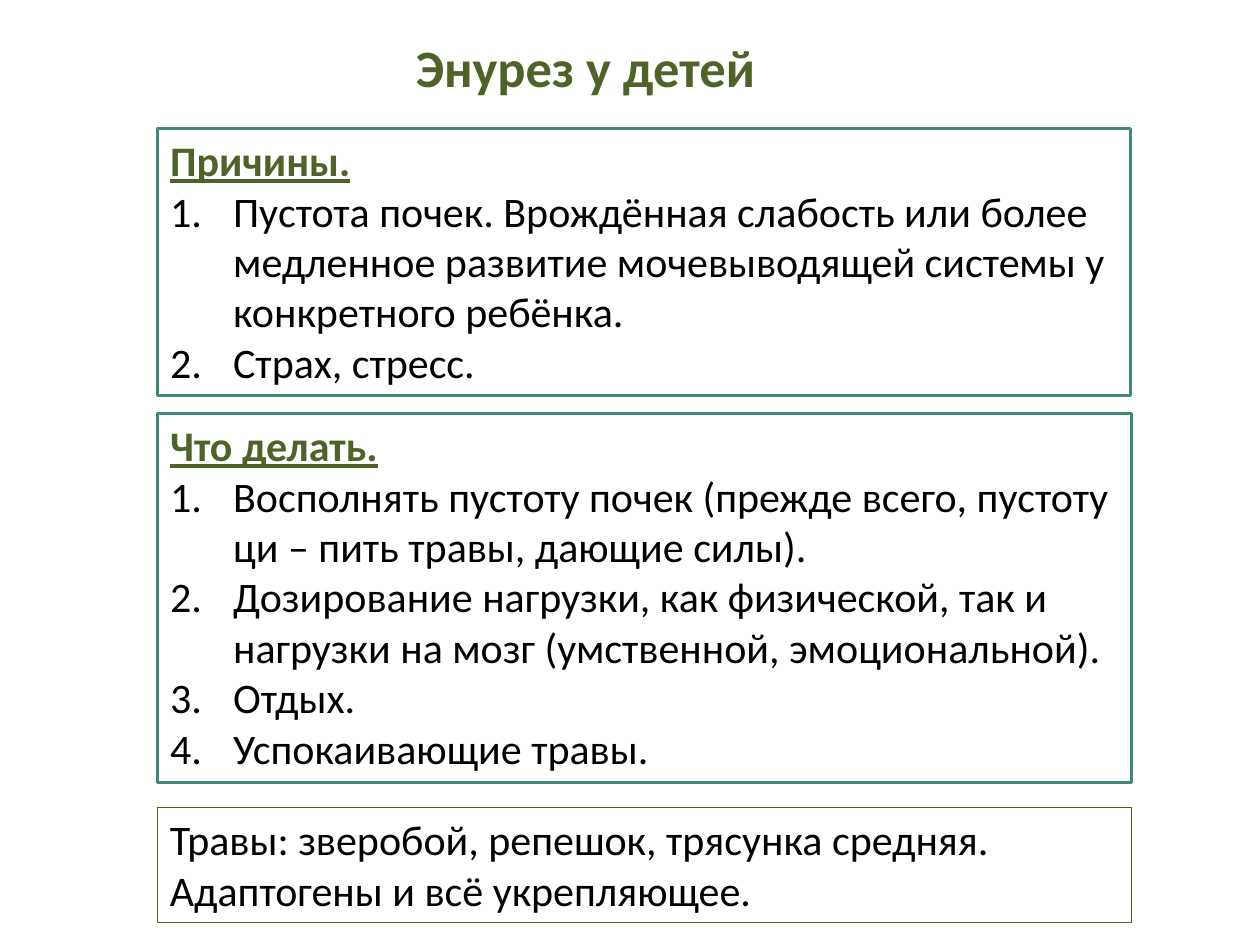
from dataclasses import dataclass

from lxml import etree
from pptx import Presentation
from pptx.dml.color import RGBColor
from pptx.enum.text import MSO_ANCHOR, MSO_AUTO_SIZE, PP_ALIGN
from pptx.oxml.ns import qn
from pptx.util import Pt

LEFT = PP_ALIGN.LEFT
TOP = MSO_ANCHOR.TOP
NO_AUTOFIT = MSO_AUTO_SIZE.NONE
TWO_CONTENT_LAYOUT = 3


@dataclass(frozen=True)
class Theme:
    font: str = "Calibri"
    title_size: float = 30
    text_size: float = 24
    green: RGBColor = RGBColor(0x4F, 0x62, 0x28)
    teal: RGBColor = RGBColor(0x41, 0x87, 0x7A)
    black: RGBColor = RGBColor(0, 0, 0)
    number_indent: float = 36


THEME = Theme()

TITLE = "Энурез у детей"
TITLE_FRAME = (230.4, 16.5, 211, 44)
SECTIONS = [
    {
        "heading": "Причины.",
        "items": [
            "Пустота почек. Врождённая слабость или более медленное развитие "
            "мочевыводящей системы у конкретного ребёнка.",
            "Страх, стресс.",
        ],
        "frame": (90, 73.4, 556, 152.7),
    },
    {
        "heading": "Что делать.",
        "items": [
            "Восполнять пустоту почек (прежде всего, пустоту ци – пить травы, "
            "дающие силы).",
            "Дозирование нагрузки, как физической, так и нагрузки на мозг "
            "(умственной, эмоциональной).",
            "Отдых.",
            "Успокаивающие травы.",
        ],
        "frame": (90, 236.2, 556.6, 211),
    },
]
HERBS = "Травы: зверобой, репешок, трясунка средняя.\nАдаптогены и всё укрепляющее."
HERBS_FRAME = (90, 461.5, 556.6, 65.5)


def place(box, frame, wrap=True):
    box.left, box.top, box.width, box.height = map(Pt, frame)
    text_frame = box.text_frame
    text_frame.auto_size = NO_AUTOFIT
    text_frame.word_wrap = wrap
    text_frame.vertical_anchor = TOP


def outline(box, color, width):
    box.line.color.rgb = color
    box.line.width = Pt(width)


def write(para, text, size, color, bold=False, underline=False, numbered=False):
    para.text = text
    para.alignment = LEFT
    para.line_spacing = 1.0
    para.space_before = para.space_after = Pt(0)
    properties = para._p.get_or_add_pPr()
    indent = Pt(THEME.number_indent) if numbered else 0
    properties.set("marL", str(indent))
    properties.set("indent", str(-indent))
    if numbered:
        etree.SubElement(properties, qn("a:buFont"), typeface=THEME.font)
        etree.SubElement(properties, qn("a:buAutoNum"), type="arabicPeriod")
    else:
        etree.SubElement(properties, qn("a:buNone"))
    font = para.font
    font.name = THEME.font
    font.size = Pt(size)
    font.bold = bold
    font.underline = underline
    font.color.rgb = color


def fill_section(box, section):
    place(box, section["frame"])
    outline(box, THEME.teal, 1.5)
    text_frame = box.text_frame
    write(text_frame.paragraphs[0], section["heading"], THEME.text_size,
          THEME.green, bold=True, underline=True)
    for item in section["items"]:
        write(text_frame.add_paragraph(), item, THEME.text_size, THEME.black,
              numbered=True)


def main():
    deck = Presentation()
    deck.slide_width, deck.slide_height = Pt(720), Pt(540)
    page = deck.slides.add_slide(deck.slide_layouts[TWO_CONTENT_LAYOUT])

    title, *section_boxes = page.placeholders
    place(title, TITLE_FRAME, wrap=False)
    write(title.text_frame.paragraphs[0], TITLE, THEME.title_size, THEME.green,
          bold=True)

    for box, section in zip(section_boxes, SECTIONS):
        fill_section(box, section)

    herbs = page.shapes.add_textbox(*map(Pt, HERBS_FRAME))
    place(herbs, HERBS_FRAME)
    outline(herbs, THEME.green, 0.75)
    write(herbs.text_frame.paragraphs[0], HERBS, THEME.text_size, THEME.black)

    deck.save("out.pptx")


if __name__ == "__main__":
    main()
